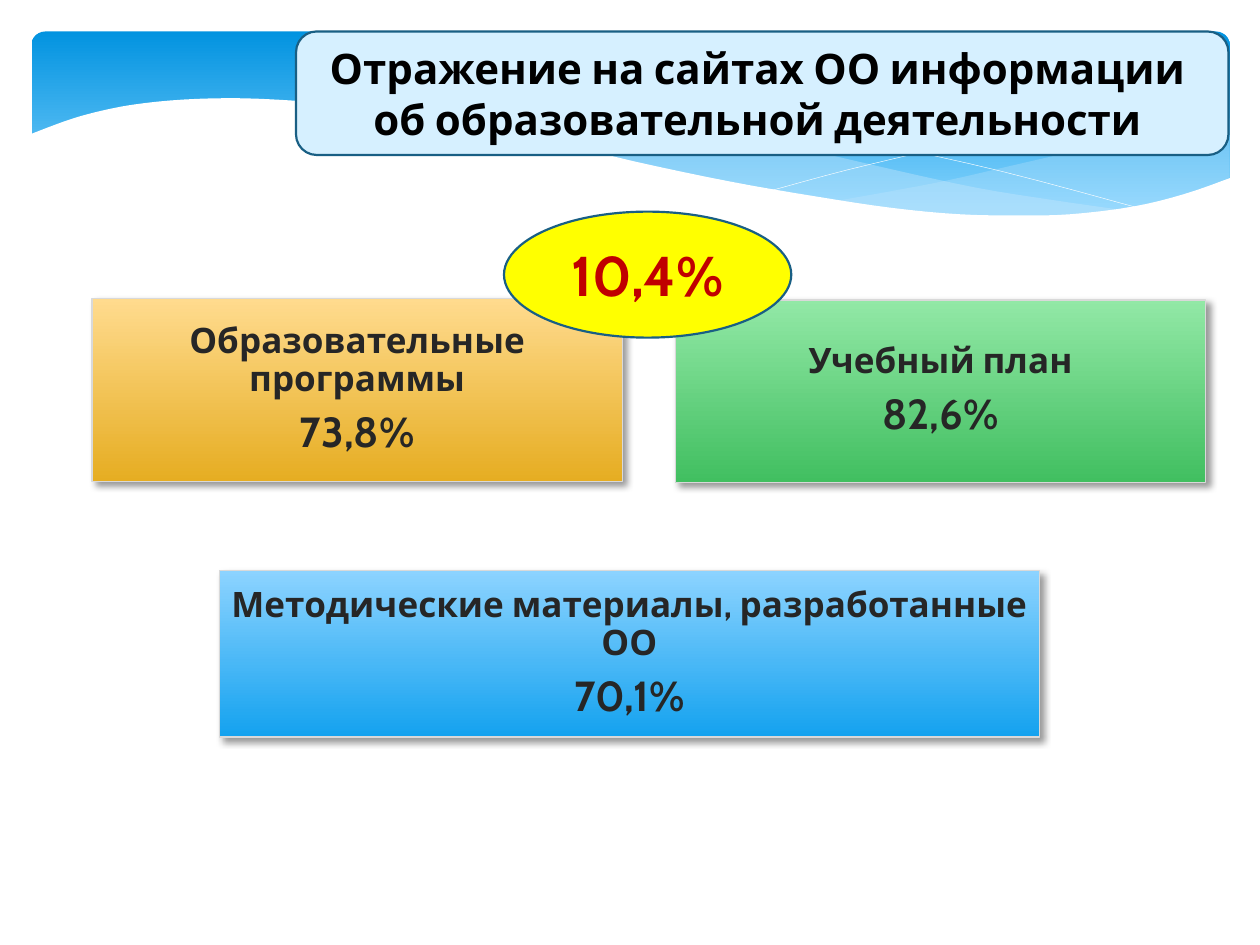
from lxml.etree import SubElement
from pptx import Presentation
from pptx.dml.color import RGBColor
from pptx.enum.shapes import MSO_SHAPE
from pptx.enum.text import MSO_ANCHOR, PP_ALIGN
from pptx.oxml.ns import qn
from pptx.util import Inches, Pt

FONT = "Cabin"
WHITE = RGBColor(0xFF, 0xFF, 0xFF)
BLACK = RGBColor(0x00, 0x00, 0x00)
DARK_GREY = RGBColor(0x26, 0x26, 0x26)
LIGHT_GREY = RGBColor(0xD9, 0xD9, 0xD9)
RED = RGBColor(0xC0, 0x00, 0x00)
YELLOW = RGBColor(0xFF, 0xFF, 0x00)
PALE_BLUE = RGBColor(0xD6, 0xF0, 0xFF)
WAVE_BLUE = RGBColor(0xC6, 0xE7, 0xFC)
NAVY = RGBColor(0x19, 0x5F, 0x84)
BANNER_BLUES = (RGBColor(0x02, 0x93, 0xE0), RGBColor(0x83, 0xD3, 0xFE))
GOLDS = (RGBColor(0xFF, 0xDB, 0x8E), RGBColor(0xE6, 0xAD, 0x22))
GREENS = (RGBColor(0x92, 0xE8, 0xA6), RGBColor(0x41, 0xBF, 0x60))
BLUES = (RGBColor(0x8C, 0xD3, 0xFF), RGBColor(0x14, 0xA2, 0xEF))

# Edges of the header waves, in inches
RIGHT_WAVE = [
    [(9.76, 0.94), (9.35, 1.01), (8.91, 1.1), (8.61, 1.18), (8.05, 1.31),
     (7.53, 1.43), (7.06, 1.52), (6.61, 1.6)],
    [(6.61, 1.6), (7.05, 1.65), (7.45, 1.69), (7.81, 1.72), (8.14, 1.72),
     (8.44, 1.71), (8.81, 1.67), (9.13, 1.62), (9.42, 1.54), (9.76, 1.41)],
]
LONG_WAVE = [
    [(8.93, 1.67), (8.37, 1.59), (7.75, 1.49), (7.06, 1.34), (6.29, 1.16),
     (5.84, 1.06), (5.41, 0.97), (5.02, 0.9), (4.42, 0.83), (3.8, 0.8),
     (3.28, 0.81), (2.86, 0.86)],
    [(2.86, 0.86), (3.42, 0.94), (4.04, 1.06), (4.49, 1.16), (5.3, 1.35),
     (6.01, 1.5), (6.5, 1.58), (6.95, 1.65), (7.36, 1.69), (7.85, 1.72),
     (8.28, 1.73), (8.67, 1.7), (8.93, 1.67)],
]
FALLING_LINE = [
    [(3.09, 0.9), (3.35, 0.85), (3.74, 0.82), (4.16, 0.81), (4.69, 0.83),
     (5.33, 0.88), (6.08, 0.98), (6.95, 1.14), (7.95, 1.36), (9.07, 1.66)],
]
RISING_LINE = [
    [(6.13, 1.51), (6.72, 1.35), (7.48, 1.17), (8.06, 1.04), (8.66, 0.93),
     (9.1, 0.86), (9.51, 0.82), (9.75, 0.8)],
]
WHITE_WAVE = [
    [(9.77, 1.41), (9.4, 1.54), (8.99, 1.64), (8.5, 1.7), (8.09, 1.71),
     (7.61, 1.7), (7.08, 1.65), (6.48, 1.56), (5.79, 1.44), (5.03, 1.28),
     (4.47, 1.14), (3.91, 1.02), (3.4, 0.92), (2.92, 0.85), (2.5, 0.81),
     (1.93, 0.78), (1.46, 0.79), (1.06, 0.83), (0.76, 0.89), (0.52, 0.96),
     (0.23, 1.07)],
    [(0.23, 2.24), (9.77, 2.24)],
]


def smooth(edge, steps=4):
    """Return points on a Catmull-Rom curve through the points of an edge."""
    if len(edge) < 3:
        return edge
    padded = [edge[0], *edge, edge[-1]]
    curve = [edge[0]]
    for quad in zip(padded, padded[1:], padded[2:], padded[3:]):
        for step in range(1, steps + 1):
            t = step / steps
            curve.append(tuple(
                b + (c - a) * t / 2 + (2 * a - 5 * b + 4 * c - d) * t**2 / 2
                + (3 * b - a - 3 * c + d) * t**3 / 2
                for a, b, c, d in zip(*quad)))
    return curve


class SlideBuilder:
    def __init__(self, slide):
        self.slide = slide

    def block(self, kind, box, fill, line=None, width=1.25):
        """Add a preset shape; a pair of colours as fill makes a gradient."""
        shape = self.slide.shapes.add_shape(kind, *map(Inches, box))
        shape.shadow.inherit = False
        if isinstance(fill, RGBColor):
            shape.fill.solid()
            shape.fill.fore_color.rgb = fill
        else:
            shape.fill.gradient()
            shape.fill.gradient_angle = 270
            for stop, color, position in zip(shape.fill.gradient_stops, fill, (0, 1)):
                stop.color.rgb = color
                stop.position = position
        if line is None:
            shape.line.fill.background()
        else:
            shape.line.color.rgb = line
            shape.line.width = Pt(width)
        return shape

    def set_text(self, shape, lines, sizes, color):
        frame = shape.text_frame
        frame.word_wrap = True
        frame.vertical_anchor = MSO_ANCHOR.MIDDLE
        frame.text = "\n".join(lines)
        for paragraph, size in zip(frame.paragraphs, sizes):
            paragraph.alignment = PP_ALIGN.CENTER
            for run in paragraph.runs:
                run.font.name = FONT
                run.font.size = Pt(size)
                run.font.bold = True
                run.font.color.rgb = color
        return frame

    def banner(self, box):
        shape = self.block(MSO_SHAPE.ROUNDED_RECTANGLE, box, BANNER_BLUES)
        shape.adjustments[0] = 0.07
        shape.fill.gradient_stops[1].position = 0.9

    def curve(self, edges, closed):
        points = [(Inches(x), Inches(y)) for edge in edges for x, y in smooth(edge)]
        builder = self.slide.shapes.build_freeform(*points[0])
        builder.add_line_segments(points[1:], close=closed)
        shape = builder.convert_to_shape()
        shape.shadow.inherit = False
        return shape

    def wave(self, edges, color, opacity=100):
        shape = self.curve(edges, closed=True)
        shape.line.fill.background()
        shape.fill.solid()
        shape.fill.fore_color.rgb = color
        if opacity < 100:
            tint = shape._element.spPr.find(".//" + qn("a:srgbClr"))
            SubElement(tint, qn("a:alpha"), val=str(opacity * 1000))

    def wave_line(self, edges):
        shape = self.curve(edges, closed=False)
        shape.fill.background()
        shape.line.color.rgb = WHITE
        shape.line.width = Pt(0.25)

    def card(self, box, fill, label, share):
        shape = self.block(MSO_SHAPE.RECTANGLE, box, fill, LIGHT_GREY, 0.75)
        effects = shape._element.spPr.find(qn("a:effectLst"))
        shadow = SubElement(effects, qn("a:outerShdw"), blurRad=str(Pt(4)),
                            dist=str(Pt(3)), dir="2700000", algn="tl", rotWithShape="0")
        tint = SubElement(shadow, qn("a:srgbClr"), val=str(BLACK))
        SubElement(tint, qn("a:alpha"), val="40000")
        frame = self.set_text(shape, (label, share), (20, 24), DARK_GREY)
        frame.margin_left = frame.margin_right = Inches(0.08)
        frame.margin_top = frame.margin_bottom = Inches(0.08)
        for paragraph in frame.paragraphs:
            paragraph.line_spacing = 0.9
            paragraph.space_after = Pt(0.35 * paragraph.runs[0].font.size.pt)

    def callout(self, kind, box, fill, lines, size, color):
        shape = self.block(kind, box, fill, NAVY)
        self.set_text(shape, lines, [size] * len(lines), color)


def main():
    presentation = Presentation()
    presentation.slide_width, presentation.slide_height = Inches(10), Inches(7.5)
    page = SlideBuilder(presentation.slides.add_slide(presentation.slide_layouts[6]))

    page.banner((0.25, 0.25, 9.51, 1.56))
    page.wave(RIGHT_WAVE, WAVE_BLUE, 29)
    page.wave(LONG_WAVE, WAVE_BLUE, 40)
    page.wave_line(FALLING_LINE)
    page.wave_line(RISING_LINE)
    page.wave(WHITE_WAVE, WHITE)

    page.card((0.73, 2.37, 4.21, 1.45), GOLDS, "Образовательные программы", "73,8%")
    page.card((5.36, 2.38, 4.21, 1.45), GREENS, "Учебный план", "82,6%")
    page.card((1.74, 4.53, 6.51, 1.32), BLUES,
              "Методические материалы, разработанные ОО", "70,1%")

    page.callout(MSO_SHAPE.ROUNDED_RECTANGLE, (2.35, 0.25, 7.4, 0.98), PALE_BLUE,
                 ("Отражение на сайтах ОО информации ",
                  "об образовательной деятельности "), 24, BLACK)
    page.callout(MSO_SHAPE.OVAL, (4, 1.68, 2.28, 1), YELLOW, ("10,4%",), 32, RED)

    presentation.save("out.pptx")


if __name__ == "__main__":
    main()
